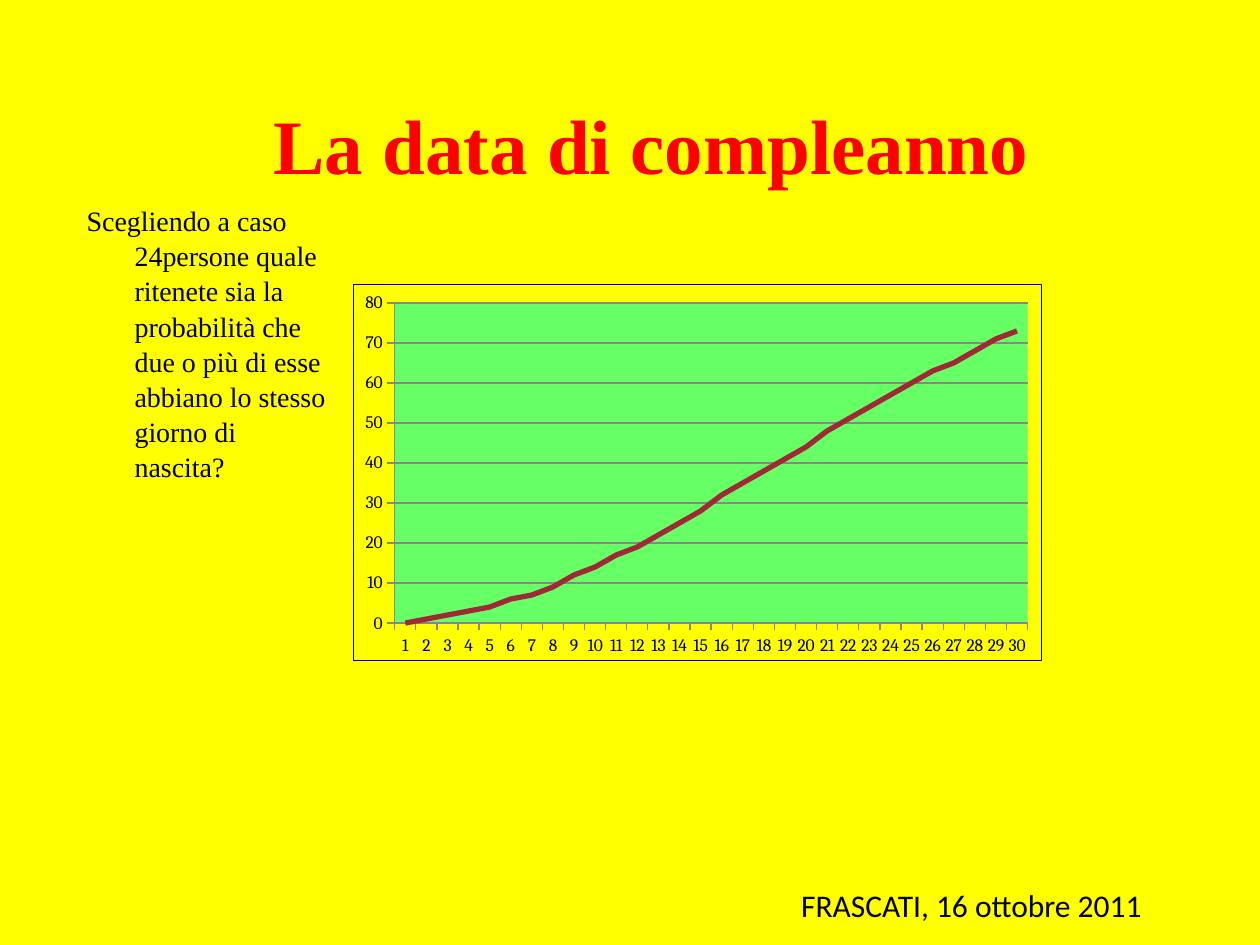
import pptx
import pptx.chart.data
import pptx.dml.color
import pptx.enum.chart
import pptx.enum.text
import pptx.oxml
import pptx.oxml.ns
import pptx.util

COLORS = {"yellow": "FFFF00", "red": "FF0000", "black": "000000",
          "green": "66FF66", "curve": "9F2936", "grid": "878787"}
PROBABILITIES = [0, 1, 2, 3, 4, 6, 7, 9, 12, 14, 17, 19, 22, 25, 28,
                 32, 35, 38, 41, 44, 48, 51, 54, 57, 60, 63, 65, 68, 71, 73]


def rgb(name):
    return pptx.dml.color.RGBColor.from_string(COLORS[name])


def set_font(font, name, size, color="black", bold=False):
    font.name, font.size, font.bold = name, pptx.util.Pt(size), bold
    font.color.rgb = rgb(color)


def write(sp, text, font, size, color="black", bold=False, align=None,
          anchor=None, wrap=True):
    """Put one formatted paragraph in a shape and return the paragraph."""
    tf = sp.text_frame
    tf.word_wrap = wrap
    tf.auto_size = pptx.enum.text.MSO_AUTO_SIZE.NONE
    tf.vertical_anchor = anchor
    p = tf.paragraphs[0]
    p.alignment = align
    r = p.add_run()
    r.text = text
    set_font(r.font, font, size, color, bold)
    return p


def chart_xml(body, tag):
    return pptx.oxml.parse_xml(
        f"<c:{tag} {pptx.oxml.ns.nsdecls('c', 'a')}>{body}</c:{tag}>")


def solid(name):
    return f'<a:solidFill><a:srgbClr val="{COLORS[name]}"/></a:solidFill>'


class Deck:
    """Holds the serif style and the current slide; boxes are shares of the slide."""
    serif = "Times New Roman"

    def __init__(self, width, height):
        self.prs = pptx.Presentation()
        self.prs.slide_width = pptx.util.Inches(width)
        self.prs.slide_height = pptx.util.Inches(height)

    def new_slide(self, background):
        self.s = self.prs.slides.add_slide(self.prs.slide_layouts[5])
        fill = self.s.background.fill
        fill.solid()
        fill.fore_color.rgb = rgb(background)

    def box(self, x, y, w, h):
        W, H = self.prs.slide_width, self.prs.slide_height
        return [int(v) for v in (x * W, y * H, w * W, h * H)]

    def title(self, text, box):
        sp = self.s.shapes.title
        sp.left, sp.top, sp.width, sp.height = self.box(*box)
        write(sp, text, self.serif, 44, "red", bold=True,
              align=pptx.enum.text.PP_ALIGN.CENTER,
              anchor=pptx.enum.text.MSO_ANCHOR.MIDDLE)

    def text(self, text, box, font, size, hanging=0, **fmt):
        sp = self.s.shapes.add_textbox(*self.box(*box))
        p = write(sp, text, font, size, **fmt)
        if hanging:
            indent = pptx.util.Inches(hanging)
            pPr = p._p.get_or_add_pPr()
            pPr.set("marL", str(indent))
            pPr.set("indent", str(-indent))
            p.line_spacing = 1.05

    def line_chart(self, values, box):
        data = pptx.chart.data.CategoryChartData()
        data.categories = [str(i + 1) for i in range(len(values))]
        data.add_series("Series 1", values)
        chart = self.s.shapes.add_chart(
            pptx.enum.chart.XL_CHART_TYPE.LINE, *self.box(*box), data).chart
        chart.has_legend = chart.has_title = False
        set_font(chart.font, "Cambria", 10)
        chart.plots[0].vary_by_categories = False
        series = chart.plots[0].series[0]
        series.smooth = False
        series.format.line.color.rgb = rgb("curve")
        series.format.line.width = pptx.util.Pt(3)
        series.marker.style = pptx.enum.chart.XL_MARKER_STYLE.NONE
        for axis in (chart.category_axis, chart.value_axis):
            axis.major_tick_mark = pptx.enum.chart.XL_TICK_MARK.OUTSIDE
            axis.format.line.color.rgb = rgb("grid")
        axis = chart.value_axis
        axis.minimum_scale, axis.maximum_scale, axis.major_unit = 0, 80, 10
        axis.major_gridlines.format.line.color.rgb = rgb("grid")
        self.frame_chart(chart)

    def frame_chart(self, chart):
        """Place the plot in the chart, fill it and draw the outer border."""
        space = chart._chartSpace
        plot = space.chart.plotArea
        for layout in plot.findall(pptx.oxml.ns.qn("c:layout")):
            plot.remove(layout)
        places = {"x": 0.06, "y": 0.05, "w": 0.92, "h": 0.85}
        body = '<c:layoutTarget val="inner"/>'
        body += "".join(f'<c:{k}Mode val="edge"/>' for k in "xy")
        body += "".join(f'<c:{k} val="{v}"/>' for k, v in places.items())
        plot.insert(0, chart_xml(f"<c:manualLayout>{body}</c:manualLayout>", "layout"))
        plot.append(chart_xml(solid("green"), "spPr"))
        border = f'<a:ln w="{pptx.util.Pt(0.75)}">{solid("black")}</a:ln>'
        space.chart.addnext(chart_xml("<a:noFill/>" + border, "spPr"))


def main():
    deck = Deck(10, 7.5)
    deck.new_slide("yellow")
    deck.text("Scegliendo a caso 24persone quale ritenete sia la probabilità che "
              "due o più di esse abbiano lo stesso giorno di nascita?",
              (0.059, 0.207, 0.213, 0.273), deck.serif, 16, hanging=0.38)
    deck.text("FRASCATI, 16 ottobre 2011", (0.626, 0.931, 0.307, 0.053),
              "Calibri", 18, wrap=False)
    deck.line_chart(PROBABILITIES, (0.28, 0.3, 0.547, 0.4))
    deck.title("La data di compleanno", (0.067, 0.069, 0.9, 0.167))
    deck.prs.save("out.pptx")


if __name__ == "__main__":
    main()
